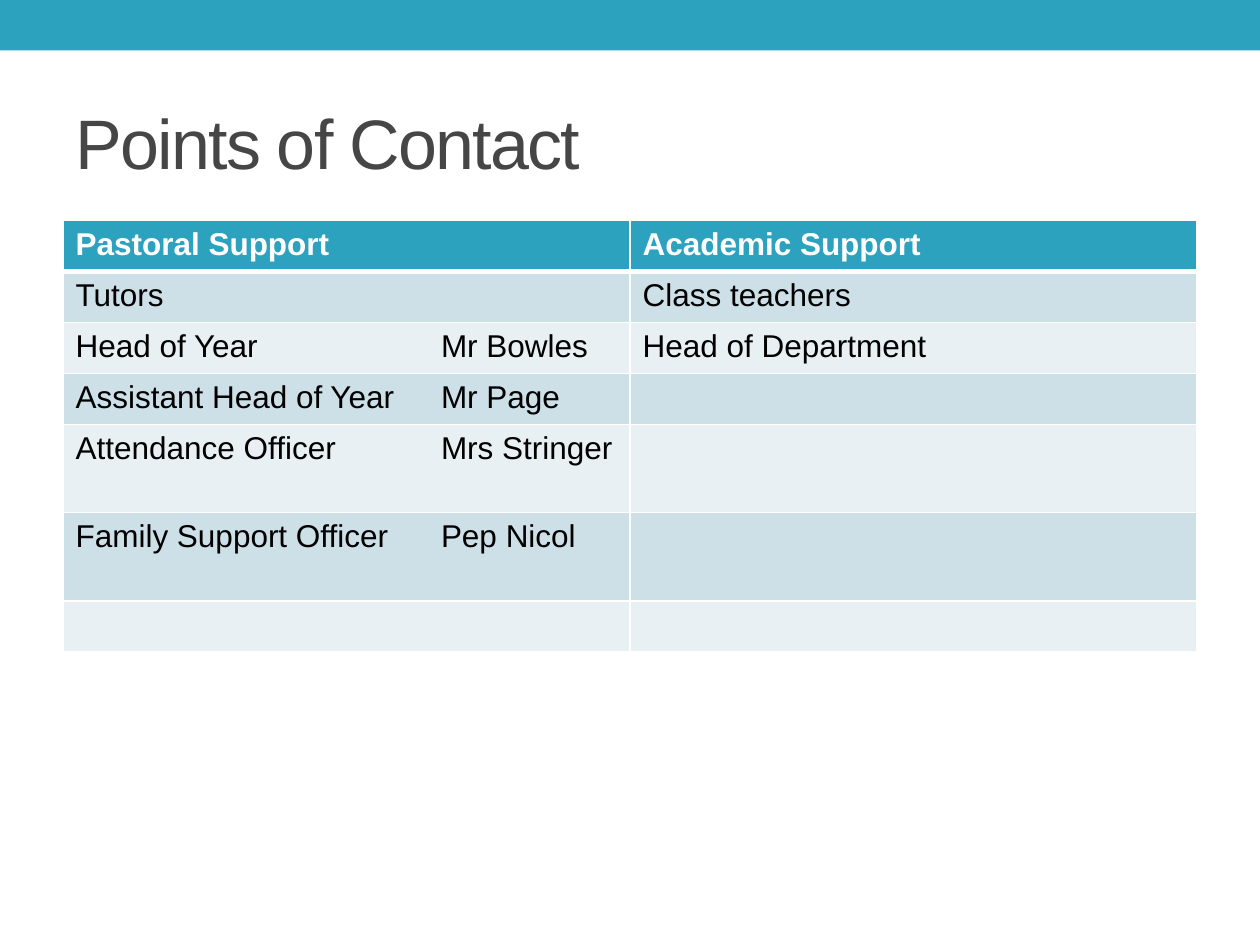
from lxml import etree
from pptx import Presentation
from pptx.dml.color import RGBColor
from pptx.enum.shapes import MSO_SHAPE
from pptx.enum.text import MSO_ANCHOR
from pptx.oxml.ns import qn
from pptx.util import Inches, Pt

RECTANGLE = MSO_SHAPE.RECTANGLE
MIDDLE = MSO_ANCHOR.MIDDLE

COLORS = {
    "teal": "2DA2BF",
    "title": "464646",
    "white": "FFFFFF",
    "black": "000000",
    "band_dark": "CDE0E8",
    "band_light": "E8F0F4",
}
CONTACTS = [
    ("Pastoral Support", "Academic Support"),
    ("Tutors", "Class teachers"),
    ("Head of Year\tMr Bowles", "Head of Department"),
    ("Assistant Head of Year\tMr Page", ""),
    ("Attendance Officer\tMrs Stringer", ""),
    ("Family Support Officer\tPep Nicol", ""),
    ("", ""),
]
ROW_HEIGHTS = [0.405] * 4 + [0.7] * 2 + [0.405]
NAME_TAB = 2.9


def rgb(name):
    return RGBColor.from_string(COLORS[name])


def write(frame, text, font="Arial", size=18, color="black", bold=False,
          spacing=None, tab=None):
    paragraph = frame.paragraphs[0]
    if tab is not None:
        stops = etree.SubElement(paragraph._p.get_or_add_pPr(), qn("a:tabLst"))
        etree.SubElement(stops, qn("a:tab"), pos=str(Inches(tab)), algn="l")
    run = paragraph.add_run()
    run.text = text
    run.font.name = font
    run.font.size = Pt(size)
    run.font.bold = bold
    run.font.color.rgb = rgb(color)
    if spacing is not None:
        run._r.get_or_add_rPr().set("spc", str(int(spacing * 100)))


class ContactSlide:
    def __init__(self, slide):
        self.slide = slide

    def band(self, left, top, width, height, color):
        band = self.slide.shapes.add_shape(
            RECTANGLE, Inches(left), Inches(top), Inches(width), Inches(height))
        band.shadow.inherit = False
        band.fill.solid()
        band.fill.fore_color.rgb = rgb(color)
        band.line.fill.background()

    def title(self, text, left, top, width, height):
        title = self.slide.shapes.add_textbox(
            Inches(left), Inches(top), Inches(width), Inches(height))
        title.text_frame.word_wrap = True
        title.text_frame.vertical_anchor = MIDDLE
        write(title.text_frame, text, size=40, color="title", spacing=-1)

    def borders(self, cell, widths):
        properties = cell._tc.get_or_add_tcPr()
        for side, width in widths.items():
            line = etree.SubElement(properties, qn(f"a:ln{side}"), w=str(Pt(width)))
            fill = etree.SubElement(line, qn("a:solidFill"))
            etree.SubElement(fill, qn("a:srgbClr"), val=COLORS["white"])

    def table(self, rows, heights, left, top, width):
        columns = len(rows[0])
        table = self.slide.shapes.add_table(
            len(rows), columns, Inches(left), Inches(top), Inches(width),
            Inches(sum(heights))).table
        for column in table.columns:
            column.width = Inches(width / columns)
        for r, (texts, height) in enumerate(zip(rows, heights)):
            table.rows[r].height = Inches(height)
            header = r == 0
            band = "teal" if header else "band_dark" if r % 2 else "band_light"
            for c, text in enumerate(texts):
                cell = table.cell(r, c)
                self.borders(cell, {"L": 1, "R": 1, "T": 3 if r == 1 else 1,
                                    "B": 3 if header else 1})
                cell.fill.solid()
                cell.fill.fore_color.rgb = rgb(band)
                if text:
                    write(cell.text_frame, text, bold=header,
                          color="white" if header else "black",
                          tab=NAME_TAB if "\t" in text else None)


def main():
    deck = Presentation()
    deck.slide_width, deck.slide_height = Inches(10), Inches(7.5)
    page = ContactSlide(deck.slides.add_slide(deck.slide_layouts[6]))
    page.band(0, 0, 10, 0.4, "teal")
    page.title("Points of Contact", 0.5, 0.58, 9, 1.08)
    page.table(CONTACTS, ROW_HEIGHTS, 0.5, 1.75, 9)
    deck.save("out.pptx")


if __name__ == "__main__":
    main()
